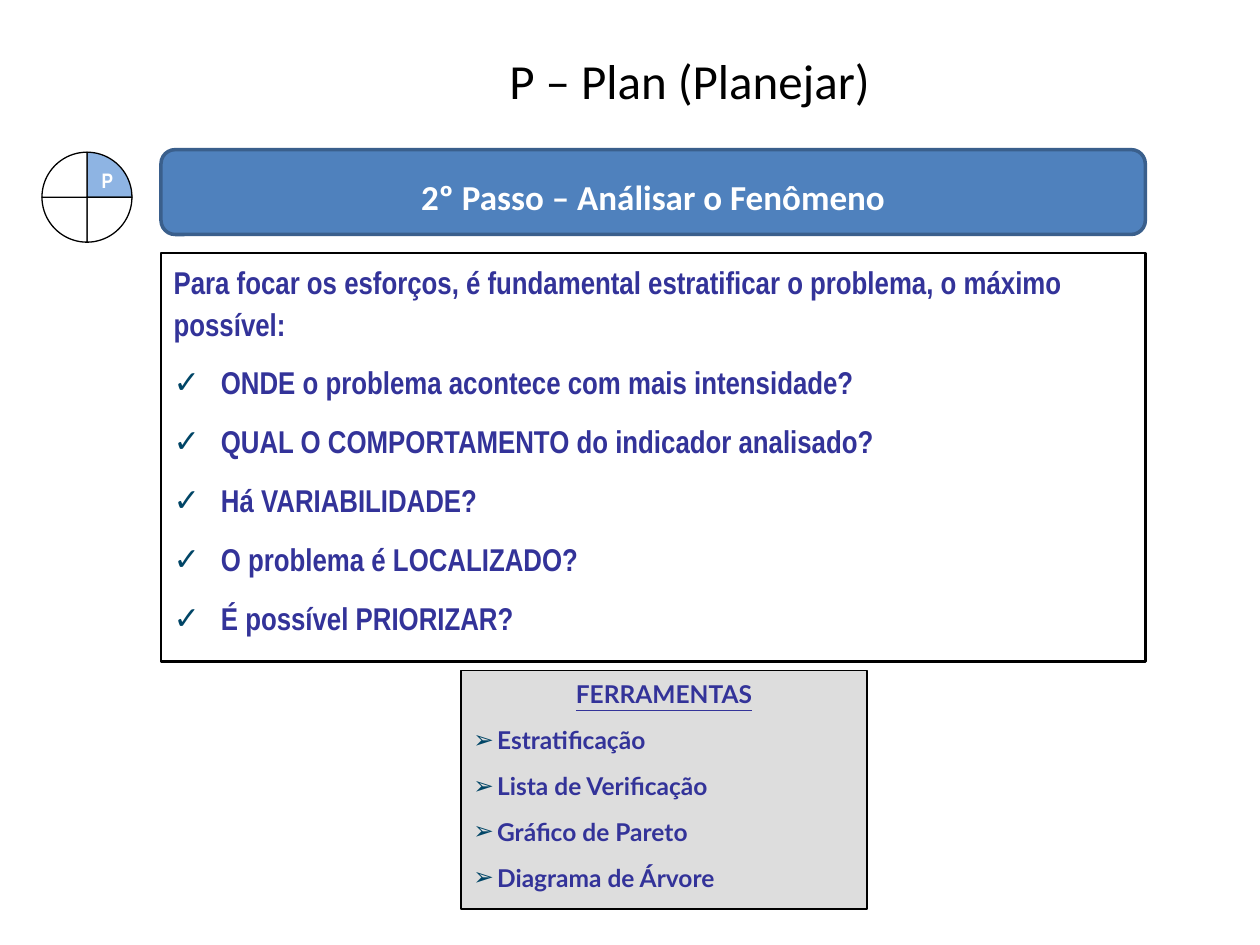
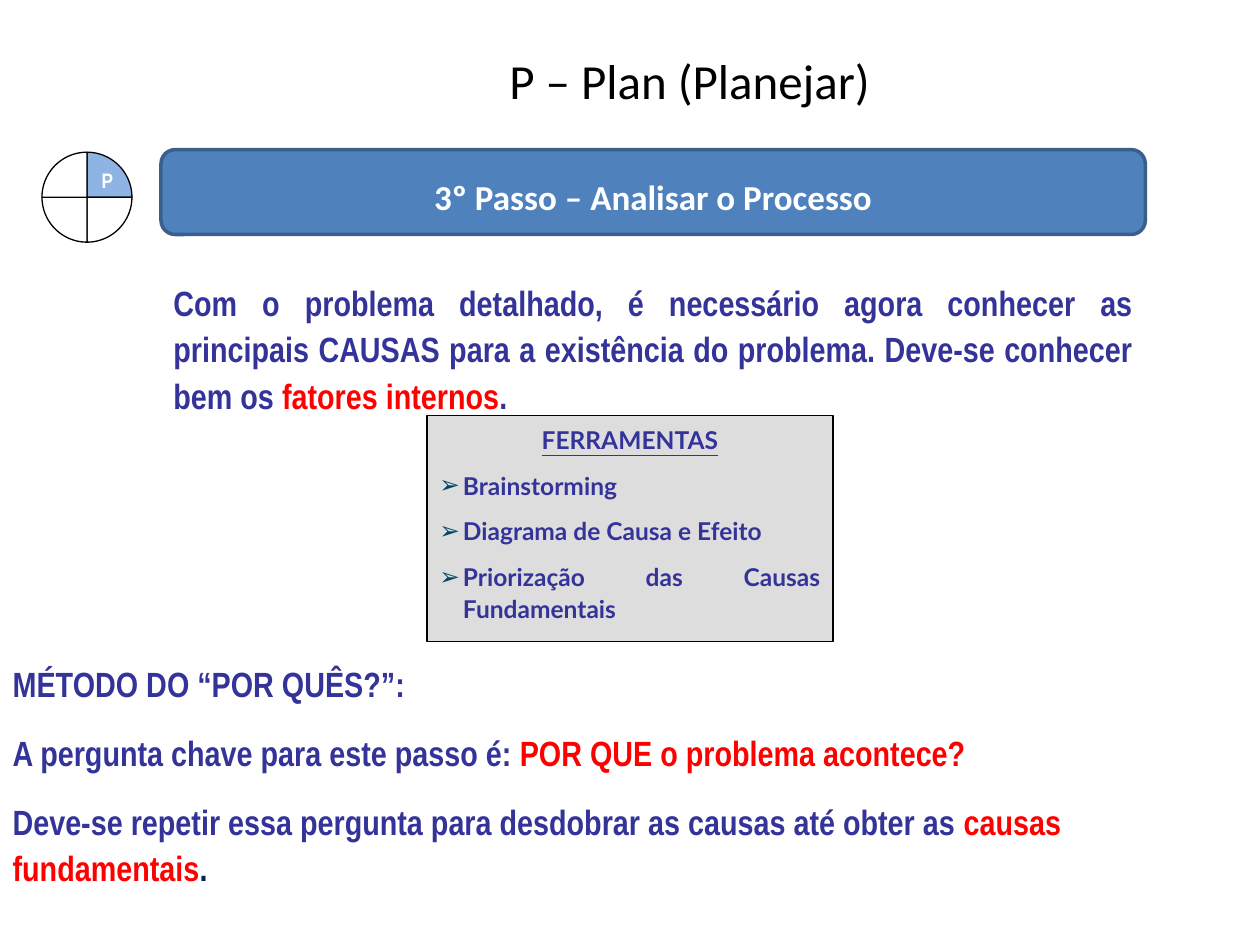
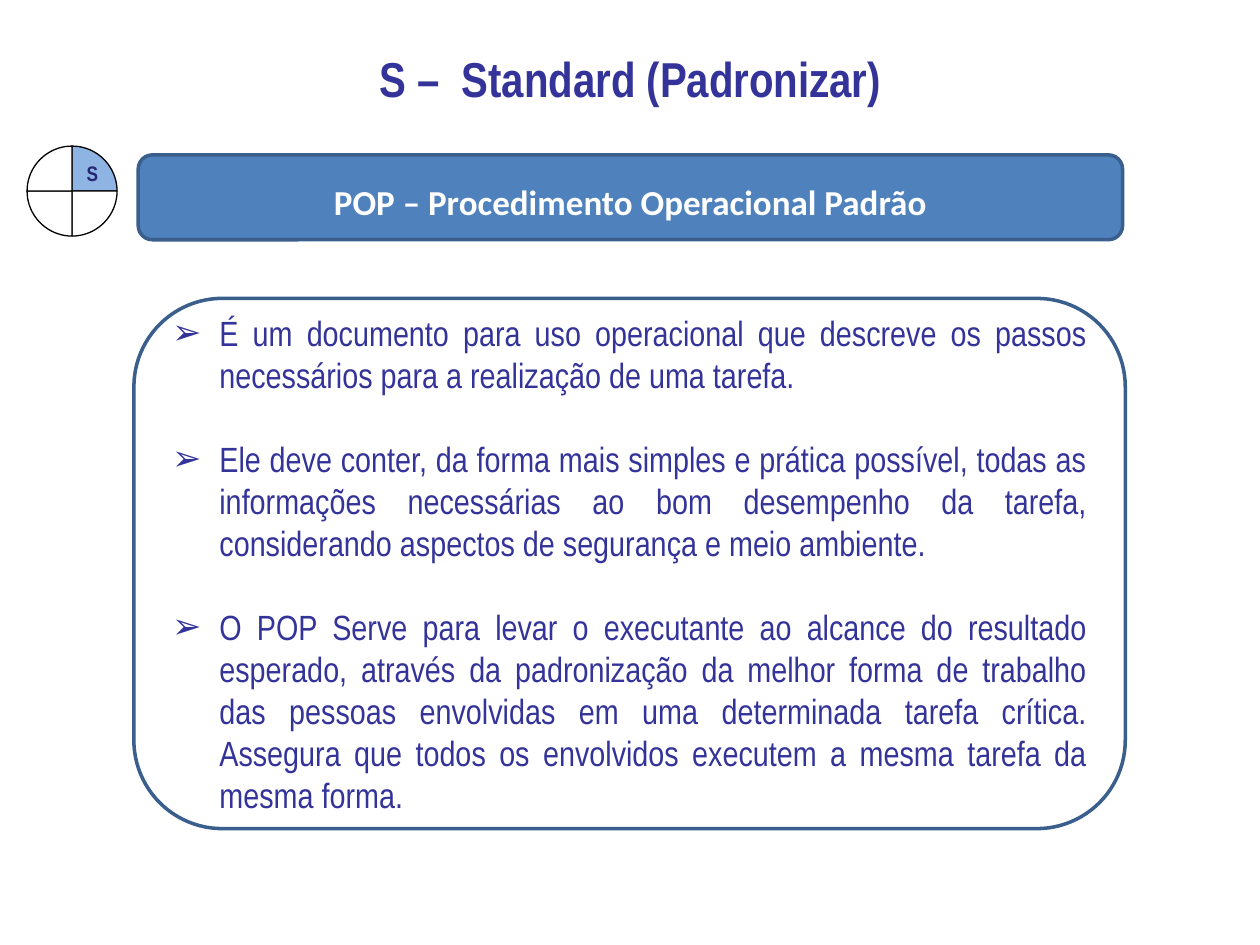
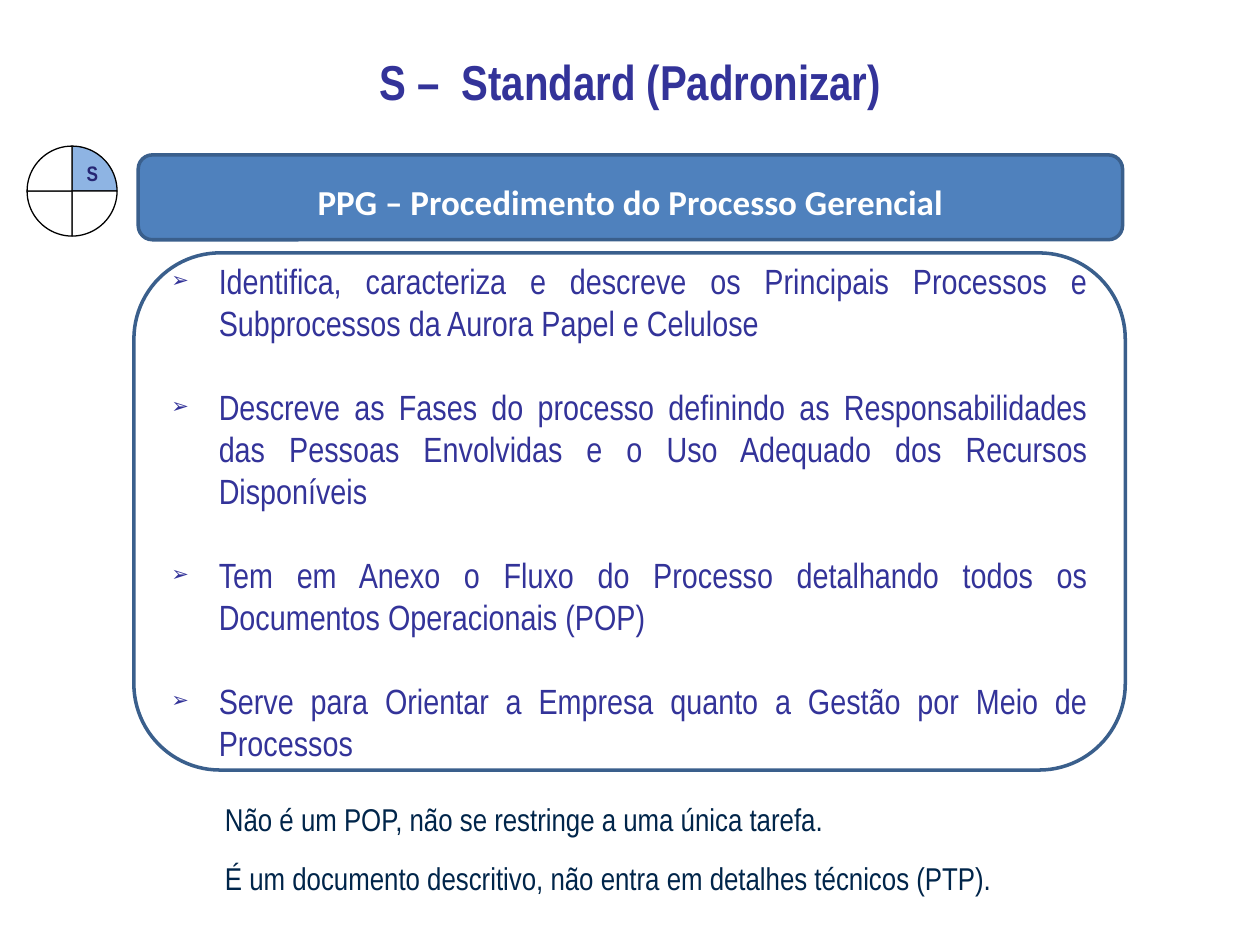
from dataclasses import dataclass, replace
from typing import Optional

from lxml import etree
from pptx import Presentation
from pptx import util as u
from pptx.chart.data import CategoryChartData
from pptx.dml.color import RGBColor
from pptx.enum import chart as charts, shapes, text
from pptx.oxml import ns

INDIGO = RGBColor(0x33, 0x33, 0x99)
DEEP_INDIGO = RGBColor(0x26, 0x26, 0x73)
NAVY = RGBColor(0x00, 0x25, 0x4A)
TEAL = RGBColor(0x00, 0x45, 0x66)
RED = RGBColor(0xFF, 0x00, 0x00)
BLUE = RGBColor(0x4F, 0x81, 0xBD)
EDGE_BLUE = RGBColor(0x3A, 0x5F, 0x8C)
LIGHT_BLUE = RGBColor(0x8E, 0xB4, 0xE3)
GRAY = RGBColor(0xDD, 0xDD, 0xDD)
BLACK = RGBColor(0, 0, 0)
WHITE = RGBColor(0xFF, 0xFF, 0xFF)

LEFT, CENTER, JUSTIFY = (
    text.PP_ALIGN.LEFT, text.PP_ALIGN.CENTER, text.PP_ALIGN.JUSTIFY)
TOP, MIDDLE = text.MSO_ANCHOR.TOP, text.MSO_ANCHOR.MIDDLE
RECTANGLE = shapes.MSO_SHAPE.RECTANGLE
ROUNDED = shapes.MSO_SHAPE.ROUNDED_RECTANGLE


@dataclass(frozen=True)
class Style:
    size: float
    font: str = "Arial Narrow"
    color: RGBColor = INDIGO
    bold: bool = True
    underline: bool = False
    align: text.PP_ALIGN = LEFT
    leading: float = 1.1
    before: float = 0.3
    after: float = 0.25
    bullet: str = ""
    bullet_color: RGBColor = TEAL
    bullet_percent: int = 100
    indent: float = 0


PLAN_TITLE = Style(28, "Calibri", BLACK, bold=False, align=CENTER, leading=1)
STANDARD_TITLE = Style(28, align=CENTER)
BANNER = Style(20, "Calibri", WHITE, align=CENTER)
INTRO = Style(18)
CHECK = replace(INTRO, bullet="✓", indent=27)
CAUSES = Style(20, align=JUSTIFY)
METHOD = Style(20, before=0.4)
TOOLS_HEAD = Style(14, "Lato", underline=True, align=CENTER)
TOOL = Style(14, "Lato", align=JUSTIFY, bullet="➢", indent=13.5)
DEFINITION = Style(20, bold=False, align=JUSTIFY, leading=1, before=1.2,
                   after=0, bullet="➢", bullet_color=INDIGO, indent=27)
SMALL_MARK = replace(DEFINITION, bullet_percent=60)
NOTE = Style(18, color=NAVY, bold=False)


class Deck:
    def __init__(self):
        self.deck = Presentation()
        self.deck.slide_width, self.deck.slide_height = u.Pt(720), u.Pt(540)
        self.page = None

    def new_page(self, title, style, place, with_body=False):
        layout = self.deck.slide_layouts[1 if with_body else 5]
        self.page = self.deck.slides.add_slide(layout)
        box = self.page.shapes.title
        self.place(box, place)
        self.fill_box(box, style, [title], MIDDLE)

    def place(self, box, place):
        box.left, box.top, box.width, box.height = map(u.Pt, place)

    def fill_box(self, box, style, contents, anchor=TOP, wrap=True, head=None):
        frame = box.text_frame
        frame.word_wrap = wrap
        frame.auto_size = text.MSO_AUTO_SIZE.NONE
        frame.vertical_anchor = anchor
        for index, content in enumerate(contents):
            para = frame.add_paragraph() if index else frame.paragraphs[0]
            para_style = head if head and not index else style
            self.format_para(para, para_style, first=not index)
            self.fill_para(para, para_style, content)

    def format_para(self, para, style, first):
        para.alignment = style.align
        para.line_spacing = style.leading
        para.space_before = u.Pt(0 if first else style.before * style.size)
        para.space_after = u.Pt(style.after * style.size)
        props = para._p.get_or_add_pPr()
        props.set("marL", str(u.Pt(style.indent)))
        props.set("indent", str(-u.Pt(style.indent)))
        if not style.bullet:
            etree.SubElement(props, ns.qn("a:buNone"))
            return
        color = etree.SubElement(props, ns.qn("a:buClr"))
        etree.SubElement(color, ns.qn("a:srgbClr"), val=str(style.bullet_color))
        etree.SubElement(props, ns.qn("a:buSzPct"),
                         val=str(style.bullet_percent * 1000))
        etree.SubElement(props, ns.qn("a:buFont"), typeface="Arial")
        etree.SubElement(props, ns.qn("a:buChar"), char=style.bullet)

    def fill_para(self, para, style, content):
        spans = [(content, style.color)] if isinstance(content, str) else content
        for words, color in spans:
            span = para.add_run()
            span.text = words
            font = span.font
            font.size, font.name = u.Pt(style.size), style.font
            font.bold, font.underline = style.bold, style.underline
            font.color.rgb = color

    def body(self, place, style, contents, head=None):
        box = self.page.placeholders[1]
        self.place(box, place)
        self.fill_box(box, style, contents, head=head)
        return box

    def text_box(self, place, style, contents, wrap=True):
        box = self.page.shapes.add_textbox(*map(u.Pt, place))
        self.fill_box(box, style, contents, wrap=wrap)

    def panel(self, kind, place, fill: Optional[RGBColor], line, weight):
        box = self.page.shapes.add_shape(kind, *map(u.Pt, place))
        box.shadow.inherit = False
        if fill is None:
            box.fill.background()
        else:
            box.fill.solid()
            box.fill.fore_color.rgb = fill
        self.outline(box, line, weight)
        return box

    def outline(self, box, color, weight):
        line = getattr(box, "line")
        line.color.rgb = color
        line.width = u.Pt(weight)

    def banner(self, left, top, words):
        box = self.panel(ROUNDED, (left, top, 562.5, 48.5), BLUE, EDGE_BLUE, 2)
        self.fill_box(box, BANNER, [words], MIDDLE)
        box.text_frame.margin_top = u.Pt(6)

    def tools(self, place, names):
        box = self.panel(RECTANGLE, place, GRAY, BLACK, 0.75)
        self.fill_box(box, TOOL, ["FERRAMENTAS", *names], head=TOOLS_HEAD)

    def definition(self, place, style, contents):
        box = self.panel(ROUNDED, place, None, EDGE_BLUE, 2)
        self.fill_box(box, style, contents, MIDDLE)

    def wheel(self, left, top, letter, color, letter_place):
        data = CategoryChartData()
        data.categories = ["1", "2", "3", "4"]
        data.add_series("Series 1", [25] * 4)
        place = map(u.Pt, (left, top, 132.5, 71.5))
        chart = self.page.shapes.add_chart(
            charts.XL_CHART_TYPE.PIE, *place, data).chart
        chart.has_legend = chart.has_title = False
        chart.font.size, chart.font.name = u.Pt(10), "Calibri"
        chart.font.color.rgb = BLACK
        chart.plots[0].vary_by_categories = True
        for index in range(4):
            part = chart.plots[0].series[0].points[index].format
            part.fill.solid()
            part.fill.fore_color.rgb = WHITE if index else LIGHT_BLUE
            self.outline(part, BLACK, 0.75)
        self.fix_plot_area(chart)
        self.text_box(letter_place, Style(12, color=color), [letter], wrap=False)

    def fix_plot_area(self, chart):
        area = chart._chartSpace.find(".//" + ns.qn("c:plotArea"))
        for old in area.findall(ns.qn("c:layout")):
            area.remove(old)
        layout = etree.Element(ns.qn("c:layout"))
        manual = etree.SubElement(layout, ns.qn("c:manualLayout"))
        settings = {"layoutTarget": "inner", "xMode": "edge", "yMode": "edge",
                    "x": 0.305, "y": 0.14, "w": 0.39, "h": 0.72}
        for name, value in settings.items():
            etree.SubElement(manual, ns.qn("c:" + name), val=str(value))
        area.insert(0, layout)

    def plan_page(self, step):
        self.new_page("P – Plan (Planejar)", PLAN_TITLE,
                      (88, 26, 612, 39.5), with_body=True)
        self.banner(92, 85.5, step)
        self.wheel(-16.5, 77, "P", WHITE, (51, 90.5, 16.5, 27.5))

    def standard_page(self, title_top, procedure):
        self.new_page("S –  Standard (Padronizar)", STANDARD_TITLE,
                      (0, title_top, 720, 44))
        self.banner(79, 88.5, procedure)
        self.wheel(-25, 73.5, "S", DEEP_INDIGO, (42.5, 86.5, 16.5, 21.5))


def main():
    deck = Deck()

    deck.plan_page("2º Passo – Análisar o Fenômeno")
    questions = deck.body((92, 144.5, 562.5, 233.5), CHECK, [
        "Para focar os esforços, é fundamental estratificar o problema, o máximo possível:",
        "ONDE o problema acontece com mais intensidade?",
        "QUAL O COMPORTAMENTO do indicador analisado?",
        "Há VARIABILIDADE?",
        "O problema é LOCALIZADO?",
        "É possível PRIORIZAR?",
    ], head=INTRO)
    deck.outline(questions, BLACK, 1.5)
    deck.tools((263.5, 383, 232, 136.5), [
        "Estratificação", "Lista de Verificação",
        "Gráfico de Pareto", "Diagrama de Árvore"])

    deck.plan_page("3º Passo – Analisar o Processo")
    deck.text_box((92, 155, 562.5, 87), CAUSES, [[
        ("Com o problema detalhado, é necessário agora conhecer as principais "
         "CAUSAS para a existência do problema. Deve-se conhecer bem os ", INDIGO),
        ("fatores internos", RED), (".", INDIGO)]])
    deck.tools((244, 237.5, 232, 129), [
        "Brainstorming", "Diagrama de Causa e Efeito",
        "Priorização das Causas Fundamentais"])
    deck.body((0, 372.5, 720, 145.5), METHOD, [
        "MÉTODO DO “POR QUÊS?”:",
        [("A pergunta chave para este passo é: ", INDIGO),
         ("POR QUE o problema acontece?", RED)],
        [("Deve-se repetir essa pergunta para desdobrar as causas até obter as ", INDIGO),
         ("causas fundamentais", RED), (".", NAVY)],
    ])

    deck.standard_page(21, "POP – Procedimento Operacional Padrão")
    deck.definition((76.5, 170.5, 566.5, 303), DEFINITION, [
        "É um documento para uso operacional que descreve os passos necessários "
        "para a realização de uma tarefa.",
        "Ele deve conter, da forma mais simples e prática possível, todas as "
        "informações necessárias ao bom desempenho da tarefa, considerando "
        "aspectos de segurança e meio ambiente.",
        "O POP Serve para levar o executante ao alcance do resultado esperado, "
        "através da padronização da melhor forma de trabalho das pessoas "
        "envolvidas em uma determinada tarefa crítica. Assegura que todos os "
        "envolvidos executem a mesma tarefa da mesma forma.",
    ])

    deck.standard_page(22.5, "PPG – Procedimento do Processo Gerencial")
    deck.definition((76.5, 144.5, 566.5, 295.5), SMALL_MARK, [
        "Identifica, caracteriza e descreve os Principais Processos e "
        "Subprocessos da Aurora Papel e Celulose",
        "Descreve as Fases do processo definindo as Responsabilidades das "
        "Pessoas Envolvidas e o Uso Adequado dos Recursos Disponíveis",
        "Tem em Anexo o Fluxo do Processo detalhando todos os Documentos "
        "Operacionais (POP)",
        "Serve para Orientar a Empresa quanto a Gestão por Meio de Processos",
    ])
    deck.text_box((121.5, 451.5, 457, 67), NOTE, [
        "Não é um POP, não se restringe a uma única tarefa.",
        "É um documento descritivo, não entra em detalhes técnicos (PTP).",
    ])

    deck.deck.save("out.pptx")


if __name__ == "__main__":
    main()
